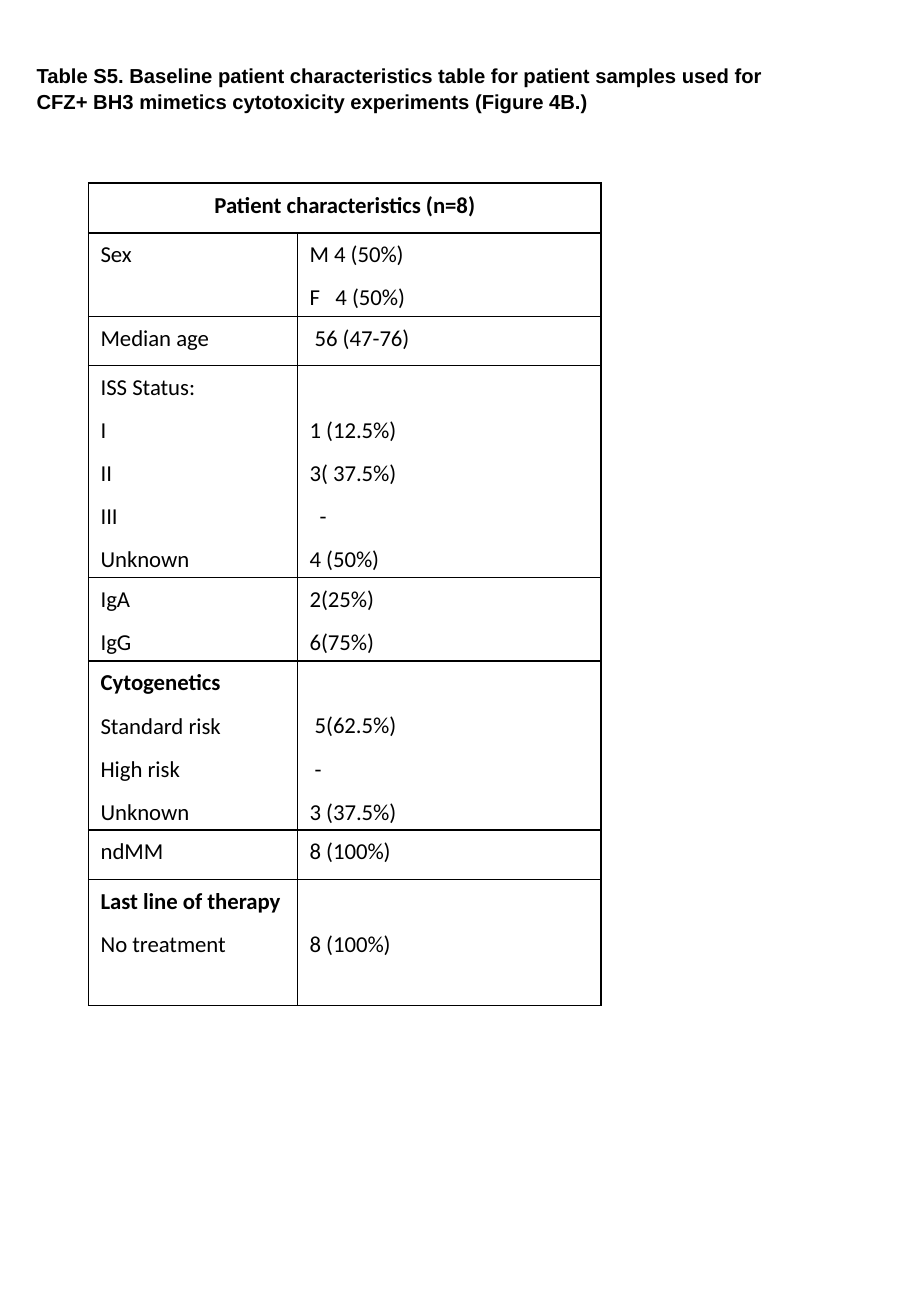
from lxml import etree
from pptx import Presentation
from pptx.dml.color import RGBColor
from pptx.enum import text
from pptx.oxml import ns
from pptx.util import Cm, Pt

CAPTION = ("Table S5. Baseline patient characteristics table for patient samples used for "
           "CFZ+ BH3 mimetics cytotoxicity experiments (Figure 4B.)")
HEADING = "Patient characteristics (n=8)"
BOLD_LABELS = {"Cytogenetics", "Last line of therapy"}
# Row height in cm, labels, values; values are (text, indent in points) where indented.
ROWS = [
    (1.75, ["Sex"], ["M 4 (50%)", "F\t4 (50%)"]),
    (1.02, ["Median age"], [("56 (47-76)", 3)]),
    (4.43, ["ISS Status:", "I", "II", "III", "Unknown"],
     ["1 (12.5%)", "3( 37.5%)", ("-", 6), "4 (50%)"]),
    (1.75, ["IgA", "IgG"], ["2(25%)", "6(75%)"]),
    (3.53, ["Cytogenetics", "Standard risk", "High risk", "Unknown"],
     [("5(62.5%)", 3), ("-", 3), "3 (37.5%)"]),
    (1.04, ["ndMM"], ["8 (100%)"]),
    (2.63, ["Last line of therapy", "No treatment"], ["8 (100%)"]),
]
HEADING_HEIGHT = 1.04
COLUMN_WIDTHS = (4.37, 6.35)
TOP_MARGIN = 0.13
LINE_PITCH = 0.9


def color(hex_value):
    return RGBColor.from_string(hex_value)


def write(paragraph, content, font="Calibri", size=13.5, bold=False, ink="000000",
          align=text.PP_ALIGN.LEFT, indent=0):
    paragraph.alignment = align
    paragraph.line_spacing = 1.07
    paragraph.space_before = Pt(0)
    paragraph.space_after = Pt(8)
    properties = paragraph._p.get_or_add_pPr()
    if indent:
        properties.set("marL", str(Pt(indent)))
        properties.set("indent", "0")
    if "\t" in content:
        tabs = etree.SubElement(properties, ns.qn("a:tabLst"))
        etree.SubElement(tabs, ns.qn("a:tab"), pos=str(Cm(0.54)), algn="l")
    run = paragraph.add_run()
    run.text = content
    run.font.name = font
    run.font.size = Pt(size)
    run.font.bold = bold
    run.font.color.rgb = color(ink)


class PatientSlide:
    paper, ink = "FFFFFF", "000000"

    def __init__(self, presentation):
        self.slide = presentation.slides.add_slide(presentation.slide_layouts[5])

    def add_caption(self, left, top, width, height):
        title = self.slide.shapes.title
        title.left, title.top, title.width, title.height = map(Cm, (left, top, width, height))
        title.fill.solid()
        title.fill.fore_color.rgb = color(self.paper)
        frame = title.text_frame
        frame.word_wrap = True
        frame.auto_size = text.MSO_AUTO_SIZE.SHAPE_TO_FIT_TEXT
        frame.vertical_anchor = text.MSO_ANCHOR.TOP
        write(frame.paragraphs[0], CAPTION, font="Arial", size=12, bold=True, ink=self.ink)

    def add_table(self, left, top):
        heights = [HEADING_HEIGHT] + [row[0] for row in ROWS]
        frame = self.slide.shapes.add_table(len(heights), len(COLUMN_WIDTHS), Cm(left), Cm(top),
                                            Cm(sum(COLUMN_WIDTHS)), Cm(sum(heights)))
        table = frame.table
        table.first_row = table.horz_banding = False
        for column, width in zip(table.columns, COLUMN_WIDTHS):
            column.width = Cm(width)
        for row, height in zip(table.rows, heights):
            row.height = Cm(height)
        for cell in table.iter_cells():
            self.style_cell(cell)
        table.cell(0, 0).merge(table.cell(0, 1))
        write(table.cell(0, 0).text_frame.paragraphs[0], HEADING, bold=True,
              align=text.PP_ALIGN.CENTER)
        for index, (_, labels, values) in enumerate(ROWS, start=1):
            self.fill_cell(table.cell(index, 0), labels)
            skipped_lines = max(0, len(labels) - len(values))
            self.fill_cell(table.cell(index, 1), values, skipped_lines)

    def style_cell(self, cell):
        cell.margin_top = Cm(TOP_MARGIN)
        cell.margin_bottom = 0
        properties = cell._tc.get_or_add_tcPr()
        for side in ("a:lnL", "a:lnR", "a:lnT", "a:lnB"):
            line = etree.SubElement(properties, ns.qn(side), w=str(Pt(1)))
            fill = etree.SubElement(line, ns.qn("a:solidFill"))
            etree.SubElement(fill, ns.qn("a:srgbClr"), val=self.ink)
        cell.fill.solid()
        cell.fill.fore_color.rgb = color(self.paper)

    def fill_cell(self, cell, entries, skipped_lines=0):
        """Write one paragraph per entry, starting below the skipped lines."""
        cell.margin_top = Cm(TOP_MARGIN + skipped_lines * LINE_PITCH)
        frame = cell.text_frame
        for index, entry in enumerate(entries):
            content, indent = entry if isinstance(entry, tuple) else (entry, 0)
            paragraph = frame.add_paragraph() if index else frame.paragraphs[0]
            write(paragraph, content, bold=content in BOLD_LABELS, indent=indent)


def main():
    presentation = Presentation()
    presentation.slide_width, presentation.slide_height = Cm(19.05), Cm(27.51)
    page = PatientSlide(presentation)
    page.add_caption(0.51, 1.17, 15.8, 1.32)
    page.add_table(1.85, 3.83)
    presentation.save("out.pptx")


if __name__ == "__main__":
    main()
